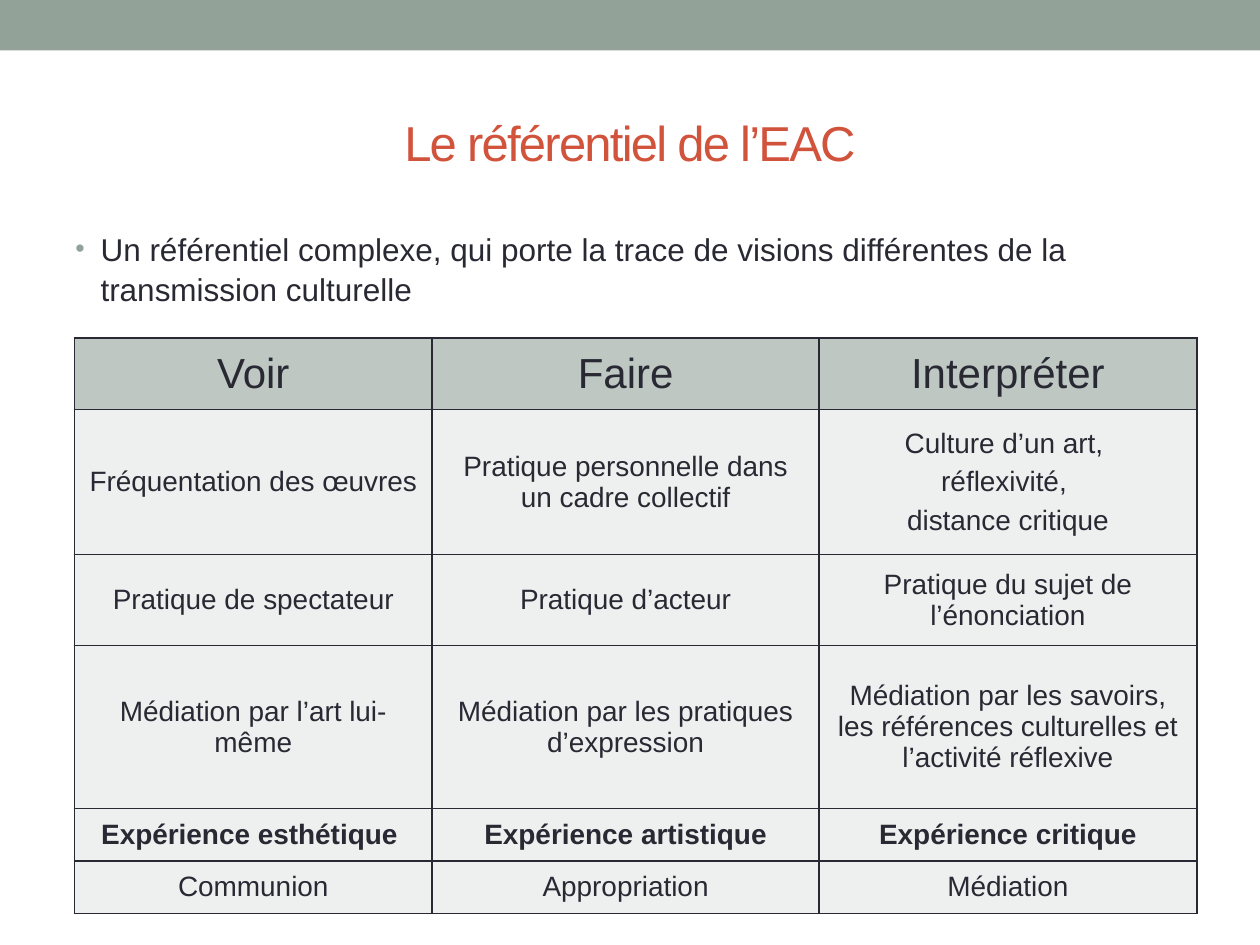
import pptx
import pptx.util
import pptx.dml.color
import pptx.enum.shapes
import pptx.enum.text
import pptx.oxml
import pptx.oxml.ns
from dataclasses import dataclass

Pt = pptx.util.Pt
RGB = pptx.dml.color.RGBColor.from_string
ALIGN = pptx.enum.text.PP_ALIGN
MIDDLE = pptx.enum.text.MSO_ANCHOR.MIDDLE


@dataclass(frozen=True)
class Theme:
    font: str = "Arial"
    ink: str = "292934"
    red: str = "D2533C"
    sage: str = "93A299"
    head: str = "BEC7C2"
    cell: str = "EEF0EF"
    title: float = 28
    body: float = 18
    label: float = 24
    text: float = 16


THEME = Theme()
COLS = [204.5, 221, 216]
ROWS = [41, 83, 52, 93, 30, 30]
BOLD = 4
GRID = [
    ["Voir", "Faire", "Interpréter"],
    ["Fréquentation des œuvres", "Pratique personnelle dans un cadre collectif",
     "Culture d’un art, \nréflexivité, \ndistance critique"],
    ["Pratique de spectateur", "Pratique d’acteur",
     "Pratique du sujet de l’énonciation"],
    ["Médiation par l’art lui-même", "Médiation par les pratiques d’expression",
     "Médiation par les savoirs, les références culturelles et l’activité réflexive"],
    ["Expérience esthétique ", "Expérience artistique", "Expérience critique"],
    ["Communion", "Appropriation", "Médiation"],
]


def xml(tag, inner="", **attrs):
    """Build one DrawingML element."""
    pairs = " ".join(f'{key}="{val}"' for key, val in attrs.items())
    space = pptx.oxml.ns.nsdecls("a")
    return pptx.oxml.parse_xml(f"<a:{tag} {space} {pairs}>{inner}</a:{tag}>")


def style(para, size, color=THEME.ink, bold=False):
    font = para.font
    font.name, font.size, font.bold = THEME.font, Pt(size), bold
    font.color.rgb = RGB(color)


def add_bar(slide, box):
    bar = slide.shapes.add_shape(
        pptx.enum.shapes.MSO_SHAPE.RECTANGLE, *map(Pt, box))
    bar.shadow.inherit = False
    bar.fill.solid()
    bar.fill.fore_color.rgb = RGB(THEME.sage)
    bar.line.fill.background()


def set_title(slide, box, text):
    title = slide.shapes.title
    title.left, title.top, title.width, title.height = map(Pt, box)
    frame = title.text_frame
    frame.text = text
    frame.vertical_anchor = MIDDLE
    para = frame.paragraphs[0]
    para.alignment = ALIGN.CENTER
    style(para, THEME.title, THEME.red)
    para.runs[0].font._element.set("spc", "-100")


def add_bullet(slide, box, text):
    frame = slide.shapes.add_textbox(*map(Pt, box)).text_frame
    frame.word_wrap = True
    para = frame.paragraphs[0]
    para.text = text
    para.line_spacing = 1.08
    para.space_after = Pt(6)
    props = para._p.get_or_add_pPr()
    indent = Pt(14.4)
    props.set("marL", str(indent))
    props.set("indent", str(-indent))
    props.append(xml("buClr", f'<a:srgbClr val="{THEME.sage}"/>'))
    props.append(xml("buSzPct", val=85000))
    props.append(xml("buFont", typeface=THEME.font))
    props.append(xml("buChar", char="•"))
    style(para, THEME.body)


def fill_cell(cell, text, row):
    head = row == 0
    cell.vertical_anchor = MIDDLE
    cell.text = text
    for pos, para in enumerate(cell.text_frame.paragraphs):
        para.alignment = ALIGN.CENTER
        if pos:
            para.space_before = Pt(4.3)
        style(para, THEME.label if head else THEME.text, bold=row == BOLD)
    props = cell._tc.get_or_add_tcPr()
    ink = f'<a:solidFill><a:srgbClr val="{THEME.ink}"/></a:solidFill>'
    for side in "LRTB":
        props.append(xml(f"ln{side}", ink, w=Pt(1)))
    cell.fill.solid()
    cell.fill.fore_color.rgb = RGB(THEME.head if head else THEME.cell)


def add_grid(slide, left, top):
    table = slide.shapes.add_table(
        len(ROWS), len(COLS), Pt(left), Pt(top),
        Pt(sum(COLS)), Pt(sum(ROWS))).table
    for col, width in zip(table.columns, COLS):
        col.width = Pt(width)
    for row, (high, texts) in enumerate(zip(ROWS, GRID)):
        table.rows[row].height = Pt(high)
        for col, text in enumerate(texts):
            fill_cell(table.cell(row, col), text, row)


def main():
    deck = pptx.Presentation()
    deck.slide_width, deck.slide_height = Pt(720), Pt(540)
    slide = deck.slides.add_slide(deck.slide_layouts.get_by_name("Title Only"))
    add_bar(slide, (0, 0, 720, 28.8))
    set_title(slide, (36, 42, 648, 78), "Le référentiel de l’EAC")
    add_bullet(slide, (36, 126, 648, 60),
               "Un référentiel complexe, qui porte la trace de visions "
               "différentes de la transmission culturelle")
    add_grid(slide, 42.5, 193)
    deck.save("out.pptx")


if __name__ == "__main__":
    main()
